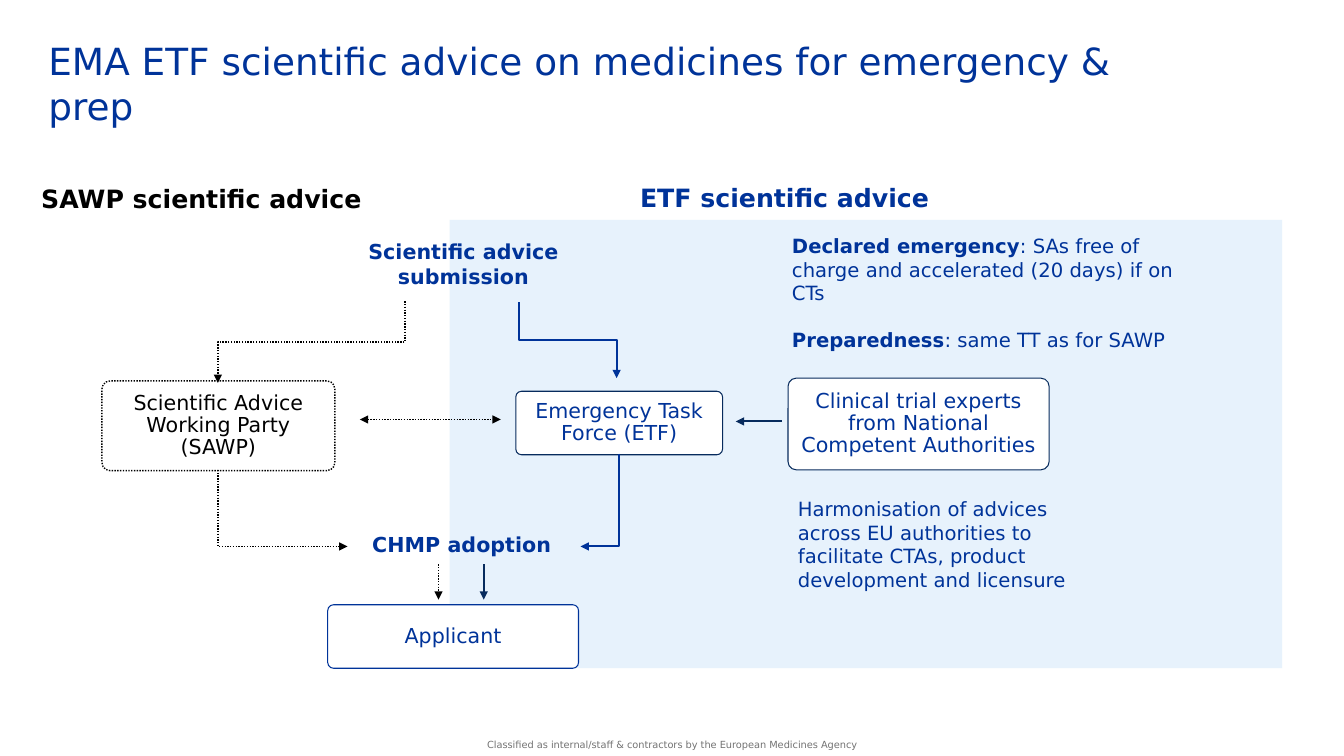
import pptx
import pptx.util
import pptx.dml.color
import pptx.enum.dml
import pptx.enum.shapes
import pptx.enum.text
import pptx.oxml.ns
import lxml.etree

Cm = pptx.util.Cm
Pt = pptx.util.Pt
RGBColor = pptx.dml.color.RGBColor
Shape = pptx.enum.shapes.MSO_SHAPE
Connector = pptx.enum.shapes.MSO_CONNECTOR
Align = pptx.enum.text.PP_ALIGN
Anchor = pptx.enum.text.MSO_ANCHOR

BLUE = RGBColor(0x00, 0x33, 0x99)
NAVY = RGBColor(0x07, 0x2B, 0x5D)
BLACK = RGBColor(0x00, 0x00, 0x00)
WHITE = RGBColor(0xFF, 0xFF, 0xFF)
PALE = RGBColor(0xE7, 0xF2, 0xFC)
GREY = RGBColor(0x73, 0x73, 0x73)
FONT = "DejaVu Sans"


def write(para, text, size=14, color=BLUE, bold=False, align=Align.LEFT, spacing=None):
    """Add a formatted span of text to a paragraph."""
    para.alignment = align
    para.line_spacing = spacing
    span = para.add_run()
    span.text = text
    span.font.name = FONT
    span.font.size = Pt(size)
    span.font.bold = bold
    span.font.color.rgb = color


class AdvicePage:
    """Draws the parts of the advice process on one slide."""

    def __init__(self, page):
        self.shapes = page.shapes

    def set_line(self, line, color, width, dotted):
        line.color.rgb = color
        line.width = Pt(width)
        if dotted:
            line.dash_style = pptx.enum.dml.MSO_LINE.ROUND_DOT

    def set_insets(self, frame, across, down):
        frame.margin_left = frame.margin_right = Cm(across)
        frame.margin_top = frame.margin_bottom = Cm(down)

    def text(self, left, top, width, height, text="", inset=(0.25, 0.13),
             anchor=Anchor.TOP, **style):
        box = self.shapes.add_textbox(Cm(left), Cm(top), Cm(width), Cm(height))
        frame = box.text_frame
        frame.word_wrap = True
        frame.vertical_anchor = anchor
        self.set_insets(frame, *inset)
        if text:
            write(frame.paragraphs[0], text, **style)
        return frame

    def panel(self, left, top, width, height, fill):
        box = self.shapes.add_shape(Shape.RECTANGLE, Cm(left), Cm(top), Cm(width), Cm(height))
        box.shadow.inherit = False
        box.fill.solid()
        box.fill.fore_color.rgb = fill
        box.line.fill.background()

    def node(self, left, top, width, height, text, color=BLUE, outline=NAVY,
             line_width=0.75, dotted=False, inset=0.1):
        box = self.shapes.add_shape(
            Shape.ROUNDED_RECTANGLE, Cm(left), Cm(top), Cm(width), Cm(height))
        box.adjustments[0] = 0.09
        box.shadow.inherit = False
        if dotted:
            box.fill.background()
        else:
            box.fill.solid()
            box.fill.fore_color.rgb = WHITE
        self.set_line(box.line, outline, line_width, dotted)
        frame = box.text_frame
        frame.word_wrap = True
        frame.vertical_anchor = Anchor.MIDDLE
        self.set_insets(frame, inset, 0.1)
        write(frame.paragraphs[0], text, size=14.7, color=color, align=Align.CENTER, spacing=0.9)

    def arrow(self, start, end, color=BLACK, dotted=False, ends=("tailEnd",),
              kind=Connector.STRAIGHT):
        points = [Cm(value) for value in (*start, *end)]
        link = self.shapes.add_connector(kind, *points)
        self.set_line(link.line, color, 1 if dotted else 1.5, dotted)
        properties = link._element.spPr
        outline = properties.find(pptx.oxml.ns.qn("a:ln"))
        for name in ends:
            lxml.etree.SubElement(outline, pptx.oxml.ns.qn("a:" + name), type="triangle")
        lxml.etree.SubElement(properties, pptx.oxml.ns.qn("a:effectLst"))
        return link

    def elbow(self, start, end, preset, **style):
        """Draw a bent arrow that leaves its start downwards."""
        (x1, y1), (x2, y2) = start, end
        middle_x, middle_y = (x1 + x2) / 2, (y1 + y2) / 2
        half_run, half_drop = abs(x2 - x1) / 2, (y2 - y1) / 2
        rightward = x2 > x1
        side = -half_drop if rightward else half_drop
        link = self.arrow((middle_x - side, middle_y - half_run),
                          (middle_x + side, middle_y + half_run),
                          kind=Connector.ELBOW, **style)
        properties = link._element.spPr
        properties.find(pptx.oxml.ns.qn("a:prstGeom")).set("prst", preset)
        turn = 270 if rightward else 90
        properties.find(pptx.oxml.ns.qn("a:xfrm")).set("rot", str(turn * 60000))


def main():
    deck = pptx.Presentation()
    deck.slide_width, deck.slide_height = Cm(33.87), Cm(19.05)
    page = AdvicePage(deck.slides.add_slide(deck.slide_layouts[6]))

    page.panel(11.33, 5.54, 20.98, 11.3, PALE)
    page.text(1.22, 0.97, 29.16, 1.24,
              "EMA ETF scientific advice on medicines for emergency & prep",
              inset=(0, 0), size=26.7)
    page.text(0.79, 4.5, 9.42, 1.02, "SAWP scientific advice", size=18, color=BLACK, bold=True)
    page.text(15.88, 4.47, 15.14, 1.02, "ETF scientific advice", size=18, bold=True)

    page.node(2.57, 9.6, 5.87, 2.26, "Scientific Advice Working Party (SAWP)",
              color=BLACK, outline=BLACK, line_width=1, dotted=True, inset=0.5)
    page.node(13, 9.86, 5.21, 1.6, "Emergency Task Force (ETF)")
    page.node(19.86, 9.53, 6.58, 2.31,
              "Clinical trial experts from National Competent Authorities")
    page.node(8.26, 15.24, 6.32, 1.6, "Applicant", outline=BLUE)

    steps = dict(size=14.7, bold=True, align=Align.CENTER)
    page.text(7.59, 5.89, 8.18, 1.5, "Scientific advice submission", **steps)
    page.text(7.75, 13.28, 7.77, 0.89, "CHMP adoption", **steps)

    page.elbow((10.21, 7.59), (5.49, 9.65), "bentConnector3", dotted=True)
    page.elbow((13.08, 7.62), (15.54, 9.53), "bentConnector3", color=BLUE)
    page.elbow((5.49, 11.84), (8.76, 13.77), "bentConnector2", dotted=True)
    page.elbow((15.6, 11.43), (14.63, 13.77), "bentConnector2", color=BLUE)
    page.arrow((9.07, 10.57), (12.62, 10.57), dotted=True, ends=("headEnd", "tailEnd"))
    page.arrow((18.54, 10.62), (19.71, 10.62), color=NAVY, ends=("headEnd",))
    page.arrow((11.05, 14.22), (11.05, 15.11), dotted=True)
    page.arrow((12.19, 14.22), (12.19, 15.11), color=NAVY)

    timing = page.text(19.71, 5.77, 10.24, 3.25)
    emergency = timing.paragraphs[0]
    write(emergency, "Declared emergency", bold=True)
    write(emergency, ": SAs free of charge and accelerated (20 days) if on CTs")
    preparedness = timing.add_paragraph()
    preparedness.space_before = Pt(16.3)
    write(preparedness, "Preparedness", bold=True)
    write(preparedness, ": same TT as for SAWP")

    page.text(19.86, 12.4, 7.77, 2.64,
              "Harmonisation of advices across EU authorities to facilitate CTAs, "
              "product development and licensure")
    page.text(11.81, 18.62, 10.26, 0.3,
              "Classified as internal/staff & contractors by the European Medicines Agency",
              inset=(0, 0), anchor=Anchor.MIDDLE, size=7, color=GREY, align=Align.CENTER)
    deck.save("out.pptx")


if __name__ == "__main__":
    main()
